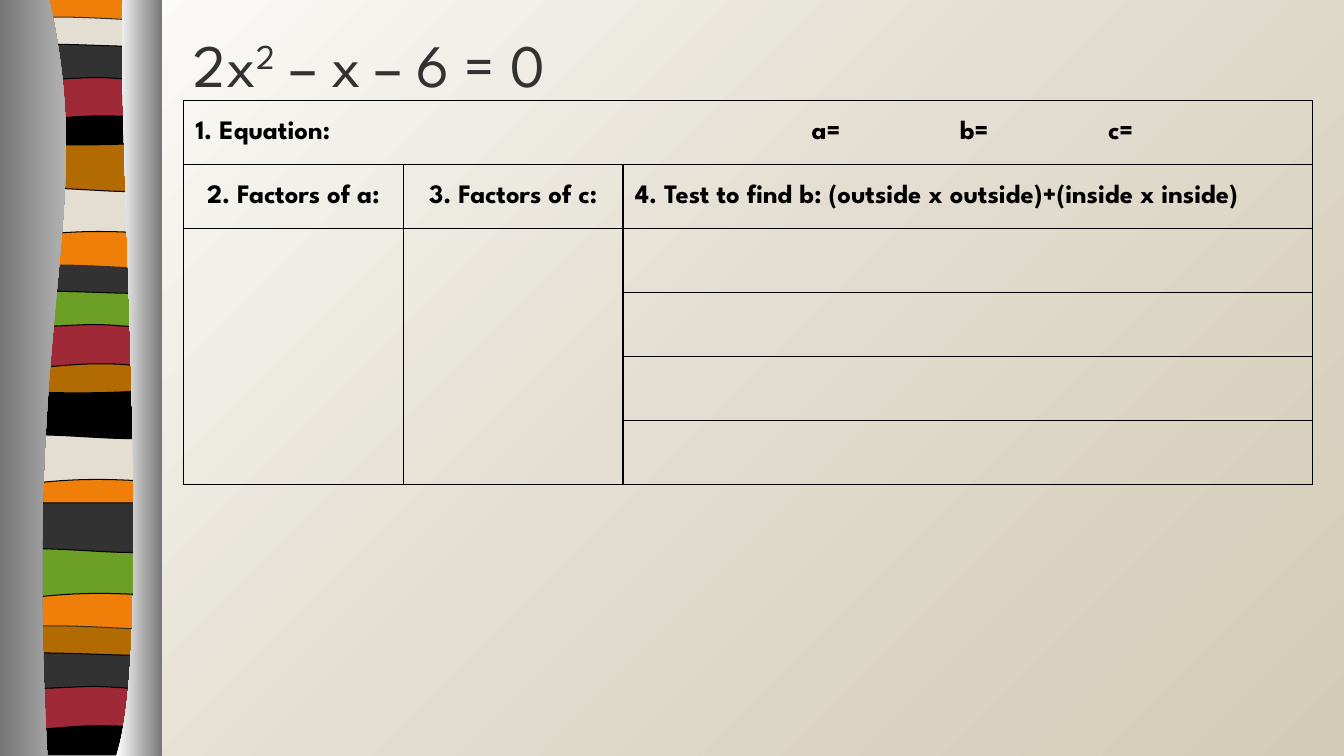
import pptx
import pptx.dml.color
import pptx.enum.shapes
import pptx.enum.text
import pptx.oxml
import pptx.oxml.ns
import pptx.util
from lxml import etree

Inches = pptx.util.Inches
RGBColor = pptx.dml.color.RGBColor
qn = pptx.oxml.ns.qn

FONT = "League Spartan"
BLACK = RGBColor(0x00, 0x00, 0x00)
WHITE = RGBColor(0xFF, 0xFF, 0xFF)
CHARCOAL = RGBColor(0x32, 0x32, 0x32)
GREY = RGBColor(0x76, 0x76, 0x76)
LIGHT_GREY = RGBColor(0xD0, 0xD0, 0xD0)
ORANGE = RGBColor(0xF0, 0x7F, 0x09)
BROWN = RGBColor(0xB2, 0x6B, 0x02)
RED = RGBColor(0x9F, 0x29, 0x36)
GREEN = RGBColor(0x6B, 0x9F, 0x25)
CREAM = RGBColor(0xE3, 0xDE, 0xD1)
SAND = RGBColor(0xD3, 0xCB, 0xB6)

# Outlines: a pair is a corner, a list of three pairs is a Bezier curve.
BASE = [(1.5, 0), (1.5, 7.48), (0, 7.48), (0, 0)]
SWEEP = [(1.5, 0), (1.5, 0.47), [(0.46, 0.39), (0.24, 0.55), (0, 0.47)], (0, 0)]
RIPPLE = [(1.5, 0), (1.5, 0.47), [(1.24, 0.54), (0.46, 0.41), (0, 0.47)], (0, 0)]
BULGE = [(1.5, 0.05), (1.5, 0.29), [(1.25, 0.33), (0.25, 0.33), (0, 0.29)], (0, 0.05),
         [(0.09, 0), (0.32, 0.01), (0.57, 0.01)], [(0.82, 0.01), (1.3, 0.04), (1.5, 0.05)]]
DIP_TOP = [(0.92, 0.06), (1.18, 0), (1.5, 0)]
DIP = [(1.5, 0), (1.5, 0.33), [(1.25, 0.38), (0.25, 0.38), (0, 0.33)], (0, 0), DIP_TOP]
FOOT = [(1.5, 0), (1.5, 0.37), (0, 0.37), (0, 0), DIP_TOP]
ARCH = [(1.5, 0), (1.5, 0.47), [(1.27, 0.41), (1.17, 0.41), (0.92, 0.41)],
        [(0.67, 0.41), (0.23, 0.47), (0, 0.47)], (0, 0)]
WAVE = [(1.5, 0.05), (1.5, 0.36), [(1.4, 0.41), (1.17, 0.36), (0.92, 0.36)],
        [(0.67, 0.36), (0.16, 0.41), (0, 0.36)], (0, 0.05),
        [(0.22, 0), (1.02, 0.05), (1.27, 0.05)]]
LEFT_EDGE = [(0.49, 0), [(0.97, 2.17), (0.22, 2.96), (0.47, 7.5)], (0, 7.5), (0, 0)]
RIGHT_EDGE = [(1.22, 0), [(1.15, 1.25), (1.54, 6.47), (1.15, 7.5)], (1.61, 7.5), (1.61, 0)]

# Outline, left, top, fill, line; from back to front.
BANDS = [
    (BASE, 0.04, -0.01, ORANGE, BLACK),
    (SWEEP, 0.04, 1.85, CREAM, BLACK),
    (RIPPLE, 0.04, 1.41, BROWN, BLACK),
    (BULGE, 0.04, 0.16, CREAM, CHARCOAL),
    (DIP, 0.04, 1.07, BLACK, BLACK),
    (ARCH, 0.04, 0.74, RED, BLACK),
    (WAVE, 0.04, 0.41, CHARCOAL, BLACK),
    (SWEEP, 0.02, 4.31, CREAM, BLACK),
    (RIPPLE, 0.02, 3.86, BLACK, BLACK),
    (BULGE, 0.02, 2.62, CHARCOAL, CHARCOAL),
    (DIP, 0.02, 3.53, BROWN, BLACK),
    (ARCH, 0.02, 3.2, RED, BLACK),
    (WAVE, 0.02, 2.86, GREEN, BLACK),
    (SWEEP, 0.04, 5.44, GREEN, BLACK),
    (RIPPLE, 0.04, 4.99, CHARCOAL, BLACK),
    (BULGE, 0.02, 6.2, BROWN, CHARCOAL),
    (FOOT, 0.02, 7.12, BLACK, BLACK),
    (ARCH, 0.02, 6.79, RED, BLACK),
    (WAVE, 0.02, 6.45, CHARCOAL, BLACK),
]


def bend(shape, outline):
    """Join the straight segments of each curve's points into one Bezier curve."""
    segments = iter(list(shape._element.iter(qn("a:lnTo"))))
    for part in outline[1:]:
        first = next(segments)
        if isinstance(part, list):
            first.tag = qn("a:cubicBezTo")
            for _ in part[1:]:
                segment = next(segments)
                first.append(segment[0])
                segment.getparent().remove(segment)


def set_gradient(shape, colors, direction):
    """Fill with evenly spaced colours; direction is a:lin or a:path markup."""
    stops = "".join(f'<a:gs pos="{100000 * index // (len(colors) - 1)}">'
                    f'<a:srgbClr val="{color}"/></a:gs>' for index, color in enumerate(colors))
    shape.fill.gradient()
    properties = shape._element.spPr
    properties.replace(properties.find(qn("a:gradFill")), pptx.oxml.parse_xml(
        f'<a:gradFill {pptx.oxml.ns.nsdecls("a")} rotWithShape="1">'
        f"<a:gsLst>{stops}</a:gsLst>{direction}</a:gradFill>"))


class SlideBuilder:
    def __init__(self, presentation):
        self.slide = presentation.slides.add_slide(presentation.slide_layouts[5])
        self.shapes = self.slide.shapes

    def style_font(self, font, size, color, bold=False):
        font.name, font.size, font.bold = FONT, pptx.util.Pt(size), bold
        font.color.rgb = color

    def backdrop(self, width, height):
        shape = self.shapes.add_shape(
            pptx.enum.shapes.MSO_SHAPE.RECTANGLE, 0, 0, width, height)
        shape.shadow.inherit = False
        shape.line.fill.background()
        set_gradient(shape, [SAND, CREAM, WHITE],
                     '<a:path path="circle"><a:fillToRect l="100000" t="100000"/></a:path>')

    def freeform(self, outline, left=0, top=0):
        points = []
        for part in outline:
            for x, y in part if isinstance(part, list) else [part]:
                points.append((Inches(left + x), Inches(top + y)))
        builder = self.shapes.build_freeform(*points[0])
        builder.add_line_segments(points[1:])
        shape = builder.convert_to_shape()
        bend(shape, outline)
        shape.shadow.inherit = False
        return shape

    def band(self, outline, left, top, fill, line):
        shape = self.freeform(outline, left, top)
        shape.fill.solid()
        shape.fill.fore_color.rgb = fill
        shape.line.color.rgb = line
        shape.line.width = pptx.util.Pt(0.75)

    def edge(self, outline, colors):
        shape = self.freeform(outline)
        shape.line.fill.background()
        set_gradient(shape, colors, '<a:lin ang="0" scaled="0"/>')

    def title(self, base, exponent, rest):
        title = self.shapes.title
        title.left, title.top = Inches(1.82), 0
        title.width, title.height = Inches(10.93), Inches(1.25)
        frame = title.text_frame
        frame.auto_size = pptx.enum.text.MSO_AUTO_SIZE.NONE
        frame.vertical_anchor = pptx.enum.text.MSO_ANCHOR.MIDDLE
        paragraph = frame.paragraphs[0]
        paragraph.alignment = pptx.enum.text.PP_ALIGN.LEFT
        for text in (base, exponent, rest):
            paragraph.add_run().text = text
        self.style_font(paragraph.font, 43, CHARCOAL)
        paragraph.runs[1].font._element.set("baseline", "30000")
        self.shapes._spTree.append(title._element)  # in front of the backdrop

    def factor_table(self):
        table = self.shapes.add_table(
            6, 3, Inches(1.82), Inches(1), Inches(11.2), Inches(3.81)).table
        table.first_row = table.horz_banding = False
        for column, width in zip(table.columns, (2.18, 2.18, 6.84)):
            column.width = Inches(width)
        for cell in table.iter_cells():
            self.border(cell)
            cell.fill.background()
        table.cell(0, 0).merge(table.cell(0, 2))
        for column in (0, 1):
            table.cell(2, column).merge(table.cell(5, column))
        center, left = pptx.enum.text.PP_ALIGN.CENTER, pptx.enum.text.PP_ALIGN.LEFT
        equation = self.cell_text(table.cell(0, 0), "1. Equation:\ta=\tb=\tc=", left)
        self.tab_stops(equation, (6.11, 7.58, 9.05))
        self.cell_text(table.cell(1, 0), "2. Factors of a:", center)
        self.cell_text(table.cell(1, 1), "3. Factors of c:", center)
        self.cell_text(table.cell(1, 2),
                       "4. Test to find b: (outside x outside)+(inside x inside)", left)

    def border(self, cell):
        properties = cell._tc.get_or_add_tcPr()
        for side in ("a:lnL", "a:lnR", "a:lnT", "a:lnB"):
            line = etree.SubElement(properties, qn(side), w="12700")
            fill = etree.SubElement(line, qn("a:solidFill"))
            etree.SubElement(fill, qn("a:srgbClr"), val=str(BLACK))

    def cell_text(self, cell, text, alignment):
        cell.margin_left = cell.margin_right = Inches(0.12)
        cell.margin_top = cell.margin_bottom = 0
        cell.vertical_anchor = pptx.enum.text.MSO_ANCHOR.MIDDLE
        paragraph = cell.text_frame.paragraphs[0]
        paragraph.text = text
        paragraph.alignment = alignment
        self.style_font(paragraph.font, 19, BLACK, bold=True)
        return paragraph

    def tab_stops(self, paragraph, positions):
        tabs = etree.Element(qn("a:tabLst"))
        for position in positions:
            etree.SubElement(tabs, qn("a:tab"), pos=str(Inches(position)), algn="l")
        paragraph._p.get_or_add_pPr().insert(0, tabs)


def main():
    presentation = pptx.Presentation()
    presentation.slide_width, presentation.slide_height = Inches(13.33), Inches(7.5)
    builder = SlideBuilder(presentation)
    builder.backdrop(presentation.slide_width, presentation.slide_height)
    for band in BANDS:
        builder.band(*band)
    builder.edge(LEFT_EDGE, [GREY, LIGHT_GREY])
    builder.edge(RIGHT_EDGE, [WHITE, GREY])
    builder.title("2x", "2", " – x – 6 = 0")
    builder.factor_table()
    presentation.save("out.pptx")


if __name__ == "__main__":
    main()
